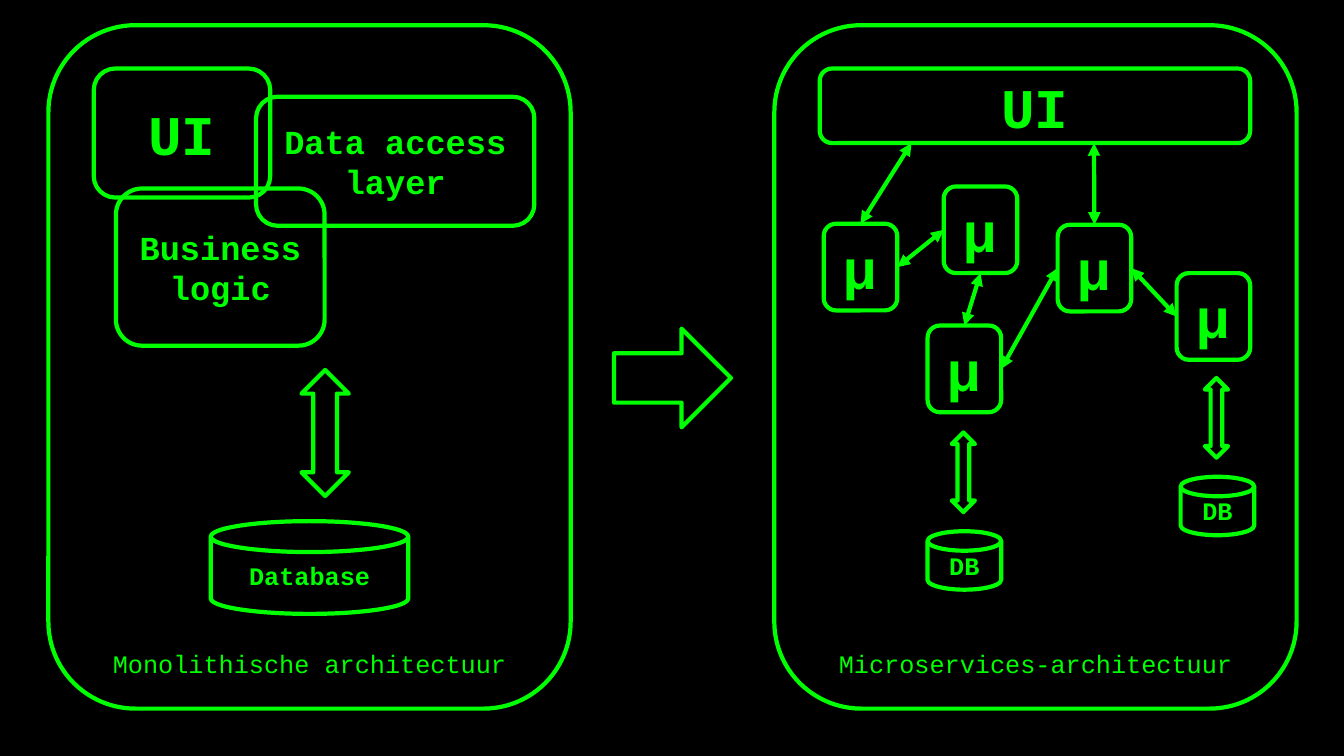
"""Build a slide that sets a monolith beside microservices."""
from lxml import etree
from pptx import Presentation
from pptx.dml.color import RGBColor
from pptx.enum.shapes import MSO_CONNECTOR, MSO_SHAPE
from pptx.enum.text import MSO_ANCHOR, PP_ALIGN
from pptx.oxml.ns import qn
from pptx.util import Pt

PX = 9144
GREEN = RGBColor(0x00, 0xFF, 0x00)
BLACK = RGBColor(0x00, 0x00, 0x00)
ROUND = MSO_SHAPE.ROUNDED_RECTANGLE
DISK = MSO_SHAPE.FLOWCHART_MAGNETIC_DISK
BOTH = MSO_SHAPE.UP_DOWN_ARROW
RIGHT = MSO_SHAPE.RIGHT_ARROW
STRAIGHT = MSO_CONNECTOR.STRAIGHT
CENTER = PP_ALIGN.CENTER
MIDDLE, BOTTOM = MSO_ANCHOR.MIDDLE, MSO_ANCHOR.BOTTOM
TOP_SIDE, LEFT_SIDE, BOTTOM_SIDE, RIGHT_SIDE = range(4)

HUGE = {"name": "Courier New", "size": Pt(40), "bold": True}
LARGE = {**HUGE, "size": Pt(24)}
SMALL = {**HUGE, "size": Pt(18)}
LABEL = {**SMALL, "bold": False}


def draw(slide, kind, box, text="", style=SMALL, anchor=MIDDLE):
    """Add an outlined shape, with centred text if any."""
    shape = slide.shapes.add_shape(kind, *(n * PX for n in box))
    shape.shadow.inherit = False
    shape.fill.background()
    shape.line.color.rgb = GREEN
    shape.line.width = Pt(3)
    if text:
        frame = shape.text_frame
        frame.word_wrap = True
        frame.vertical_anchor = anchor
        para = frame.paragraphs[0]
        para.alignment = CENTER
        run = para.add_run()
        run.text = text
        for key, value in style.items():
            setattr(run.font, key, value)
        run.font.color.rgb = GREEN
    return shape


def panel(slide, left, text):
    """Add one of the two large frames with its caption."""
    draw(slide, ROUND, (left, 25, 518, 678), text, LABEL, BOTTOM)


def micro(slide, left, top):
    """Add a microservice box."""
    return draw(slide, ROUND, (left, top, 73, 86), "µ", HUGE)


def store(slide, left, top):
    """Add a small database with the arrow above it."""
    draw(slide, DISK, (left, top, 73, 58), "DB")
    draw(slide, BOTH, (left + 24, top - 98, 23, 79))


def link(slide, start, side, end=None, into=None, point=(0, 0)):
    """Join a box to another box or to a point, with two arrowheads."""
    x, y = (n * PX for n in point)
    line = slide.shapes.add_connector(STRAIGHT, x, y, x, y)
    line.begin_connect(start, side)
    if end is not None:
        line.end_connect(end, into)
    line.line.color.rgb = GREEN
    line.line.width = Pt(3)
    for tag in ("a:headEnd", "a:tailEnd"):
        etree.SubElement(line.line._get_or_add_ln(), qn(tag), type="triangle")
    etree.SubElement(line._element.spPr, qn("a:effectLst"))


def mono(slide):
    """Draw the monolith on the left."""
    panel(slide, 48, "Monolithische architectuur")
    draw(slide, ROUND, (93, 68, 175, 128), "UI", HUGE)
    draw(slide, ROUND, (254, 96, 276, 128), "Data access layer", LARGE)
    draw(slide, ROUND, (115, 187, 207, 156), "Business logic", LARGE)
    draw(slide, DISK, (209, 517, 196, 92), "Database")
    draw(slide, BOTH, (299, 367, 47, 125))


def multi(slide):
    """Draw the microservices on the right."""
    panel(slide, 768, "Microservices-architectuur")
    draw(slide, ROUND, (813, 68, 427, 74), "UI", HUGE)
    spots = ((817, 222), (936, 185), (920, 323), (1049, 223), (1167, 271))
    first, upper, lower, hub, last = (micro(slide, *spot) for spot in spots)
    link(slide, first, RIGHT_SIDE, upper, LEFT_SIDE)
    link(slide, last, LEFT_SIDE, hub, RIGHT_SIDE)
    link(slide, lower, RIGHT_SIDE, hub, LEFT_SIDE)
    link(slide, lower, TOP_SIDE, upper, BOTTOM_SIDE)
    link(slide, first, TOP_SIDE, point=(904, 142))
    link(slide, hub, TOP_SIDE, point=(1085, 142))
    store(slide, 920, 527)
    store(slide, 1171, 473)


def main():
    """Build and save the slide."""
    deck = Presentation()
    deck.slide_width, deck.slide_height = 1333 * PX, 750 * PX
    slide = deck.slides.add_slide(deck.slide_layouts[6])
    slide.background.fill.solid()
    slide.background.fill.fore_color.rgb = BLACK
    mono(slide)
    multi(slide)
    draw(slide, RIGHT, (609, 326, 116, 98))
    deck.save("out.pptx")


if __name__ == "__main__":
    main()
